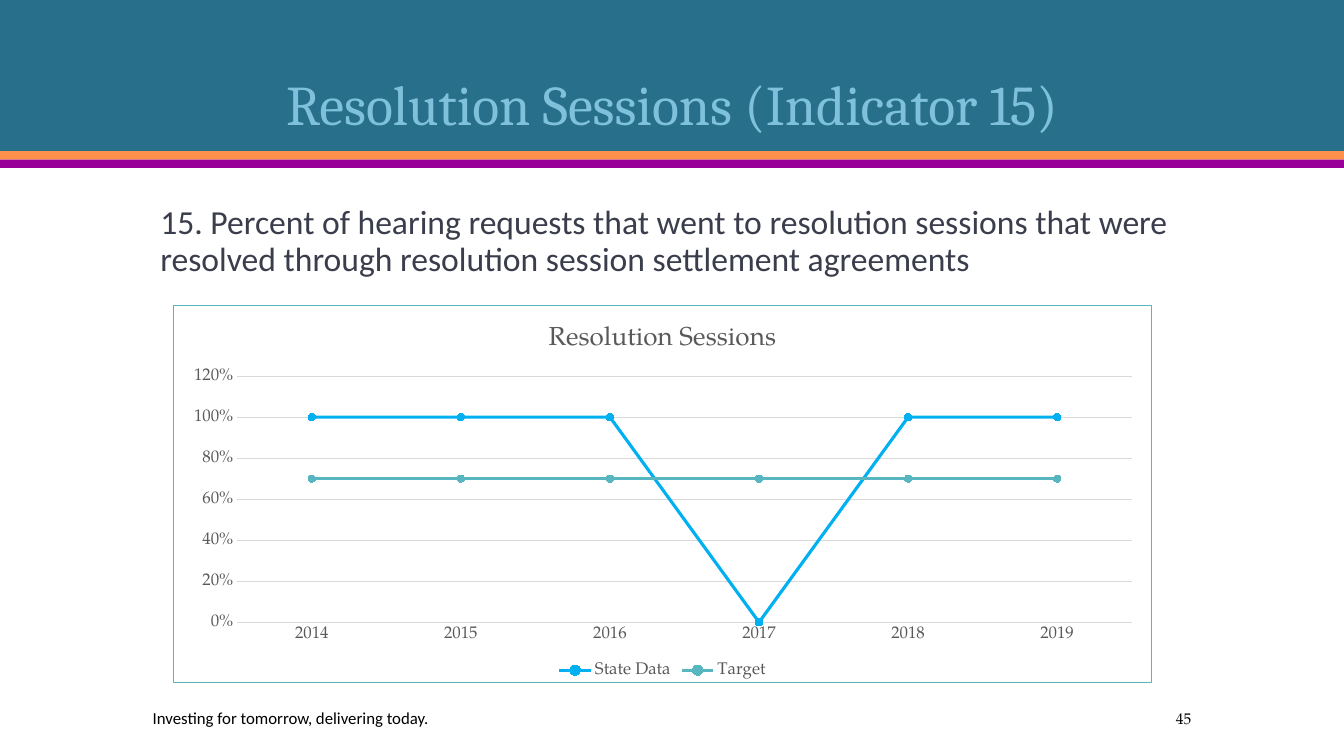
from dataclasses import dataclass

from lxml import etree
from pptx import Presentation
from pptx import util as u
from pptx.chart import data
from pptx.dml.color import RGBColor
from pptx.enum import chart as ce
from pptx.enum import shapes, text
from pptx.oxml import ns

Pt = u.Pt


@dataclass(frozen=True)
class Theme:
    band: str = "276F8B"
    orange: str = "FF914D"
    purple: str = "990099"
    title: str = "7FC1DB"
    body: str = "3A3D4B"
    ink: str = "000000"
    label: str = "595959"
    grid: str = "D9D9D9"
    state: str = "00B0F0"
    target: str = "58B6C0"
    head: str = "Cambria"
    sans: str = "Calibri"
    serif: str = "TeX Gyre Pagella"
    big: float = 40
    mid: float = 24
    cap: float = 18.6
    small: float = 12
    page: float = 11


def style(font, size, color, face):
    font.size = Pt(size)
    font.name = face
    font.bold = False
    font.color.rgb = RGBColor.from_string(color)


def write(frame, words, *, size, color, face, align=text.PP_ALIGN.LEFT,
          anchor=text.MSO_ANCHOR.TOP, line=None, before=None):
    frame.word_wrap = True
    frame.vertical_anchor = anchor
    para = frame.paragraphs[0]
    para.alignment = align
    if line:
        para.line_spacing = line
    if before:
        para.space_before = Pt(before)
    run = para.add_run()
    run.text = words
    style(run.font, size, color, face)


class Deck:
    def __init__(self, theme):
        self.theme = theme
        self.show = Presentation()
        self.show.slide_width = Pt(960)
        self.show.slide_height = Pt(540)
        self.slide = self.show.slides.add_slide(self.show.slide_layouts[6])

    def bar(self, top, high, color):
        box = self.slide.shapes.add_shape(
            shapes.MSO_SHAPE.RECTANGLE, 0, Pt(top), self.show.slide_width, Pt(high))
        box.shadow.inherit = False
        box.fill.solid()
        box.fill.fore_color.rgb = RGBColor.from_string(color)
        box.line.fill.background()

    def text(self, area, words, **form):
        box = self.slide.shapes.add_textbox(*map(Pt, area))
        write(box.text_frame, words, **form)

    def chart(self, area, title, cats, rows, frame):
        t = self.theme
        table = data.CategoryChartData(number_format="0%")
        table.categories = cats
        for name, vals, _ in rows:
            table.add_series(name, vals)
        chart = self.slide.shapes.add_chart(
            ce.XL_CHART_TYPE.LINE_MARKERS, *map(Pt, area), table).chart
        style(chart.font, t.small, t.label, t.serif)
        write(chart.chart_title.text_frame, title,
              size=t.cap, color=t.label, face=t.serif, align=text.PP_ALIGN.CENTER)
        chart.chart_title.include_in_layout = False
        chart.has_legend = True
        chart.legend.position = ce.XL_LEGEND_POSITION.BOTTOM
        chart.legend.include_in_layout = False
        style(chart.legend.font, t.small, t.label, t.serif)
        self.axes(chart)
        chart.plots[0].vary_by_categories = False
        for line, (_, _, color) in zip(chart.plots[0].series, rows):
            self.line(line, color)
        self.place(chart, frame)
        self.edge(chart, t.target)

    def axes(self, chart):
        t = self.theme
        cat, val = chart.category_axis, chart.value_axis
        for axis in (cat, val):
            axis.major_tick_mark = ce.XL_TICK_MARK.NONE
            axis.minor_tick_mark = ce.XL_TICK_MARK.NONE
            style(axis.tick_labels.font, t.small, t.label, t.serif)
        val.minimum_scale, val.maximum_scale, val.major_unit = 0, 1.2, 0.2
        val.tick_labels.number_format = "0%"
        val.tick_labels.number_format_is_linked = False
        val.format.line.fill.background()
        val.has_major_gridlines = True
        for rule in (cat.format.line, val.major_gridlines.format.line):
            rule.width = Pt(0.75)
            rule.color.rgb = RGBColor.from_string(t.grid)

    def line(self, line, color):
        rgb = RGBColor.from_string(color)
        line.smooth = False
        line.format.line.width = Pt(2.25)
        line.format.line.color.rgb = rgb
        mark = line.marker
        mark.style = ce.XL_MARKER_STYLE.CIRCLE
        mark.size = 5
        mark.format.fill.solid()
        mark.format.fill.fore_color.rgb = rgb
        mark.format.line.color.rgb = rgb

    def place(self, chart, frame):
        area = chart._chartSpace.find(".//" + ns.qn("c:plotArea"))
        for old in area.findall(ns.qn("c:layout")):
            area.remove(old)
        layout = etree.Element(ns.qn("c:layout"))
        inner = etree.SubElement(layout, ns.qn("c:manualLayout"))
        marks = [("layoutTarget", "inner"), ("xMode", "edge"), ("yMode", "edge")]
        for tag, val in marks + list(zip("xywh", frame)):
            etree.SubElement(inner, ns.qn("c:" + tag), val=str(val))
        area.insert(0, layout)

    def edge(self, chart, color):
        props = etree.Element(ns.qn("c:spPr"))
        line = etree.SubElement(props, ns.qn("a:ln"), w=str(int(Pt(0.75))))
        fill = etree.SubElement(line, ns.qn("a:solidFill"))
        etree.SubElement(fill, ns.qn("a:srgbClr"), val=color)
        chart._chartSpace.find(ns.qn("c:chart")).addnext(props)


def main():
    t = Theme()
    deck = Deck(t)
    mid = text.MSO_ANCHOR.MIDDLE
    deck.bar(0, 108, t.band)
    deck.bar(108, 6, t.orange)
    deck.bar(114, 6, t.purple)
    deck.text((102, 20, 756, 81.5), "Resolution Sessions (Indicator 15)",
              size=t.big, color=t.title, face=t.head, line=0.9,
              align=text.PP_ALIGN.CENTER, anchor=text.MSO_ANCHOR.BOTTOM)
    deck.text((102, 502, 492, 21.6), "Investing for tomorrow, delivering today.",
              size=t.small, color=t.ink, face=t.sans, anchor=mid)
    deck.text((750, 502, 108, 21.6), "45", size=t.page, color=t.ink,
              face=t.serif, align=text.PP_ALIGN.RIGHT, anchor=mid)
    deck.text((107.5, 143.5, 756, 69),
              "15. Percent of hearing requests that went to resolution sessions "
              "that were resolved through resolution session settlement agreements",
              size=t.mid, color=t.body, face=t.sans, line=0.9, before=18)
    deck.chart((123.75, 218, 699, 270), "Resolution Sessions",
               [str(year) for year in range(2014, 2020)],
               [("State Data", (1, 1, 1, 0, 1, 1), t.state),
                ("Target", (0.7,) * 6, t.target)],
               (0.065, 0.187, 0.915, 0.653))
    deck.show.save("out.pptx")


if __name__ == "__main__":
    main()
